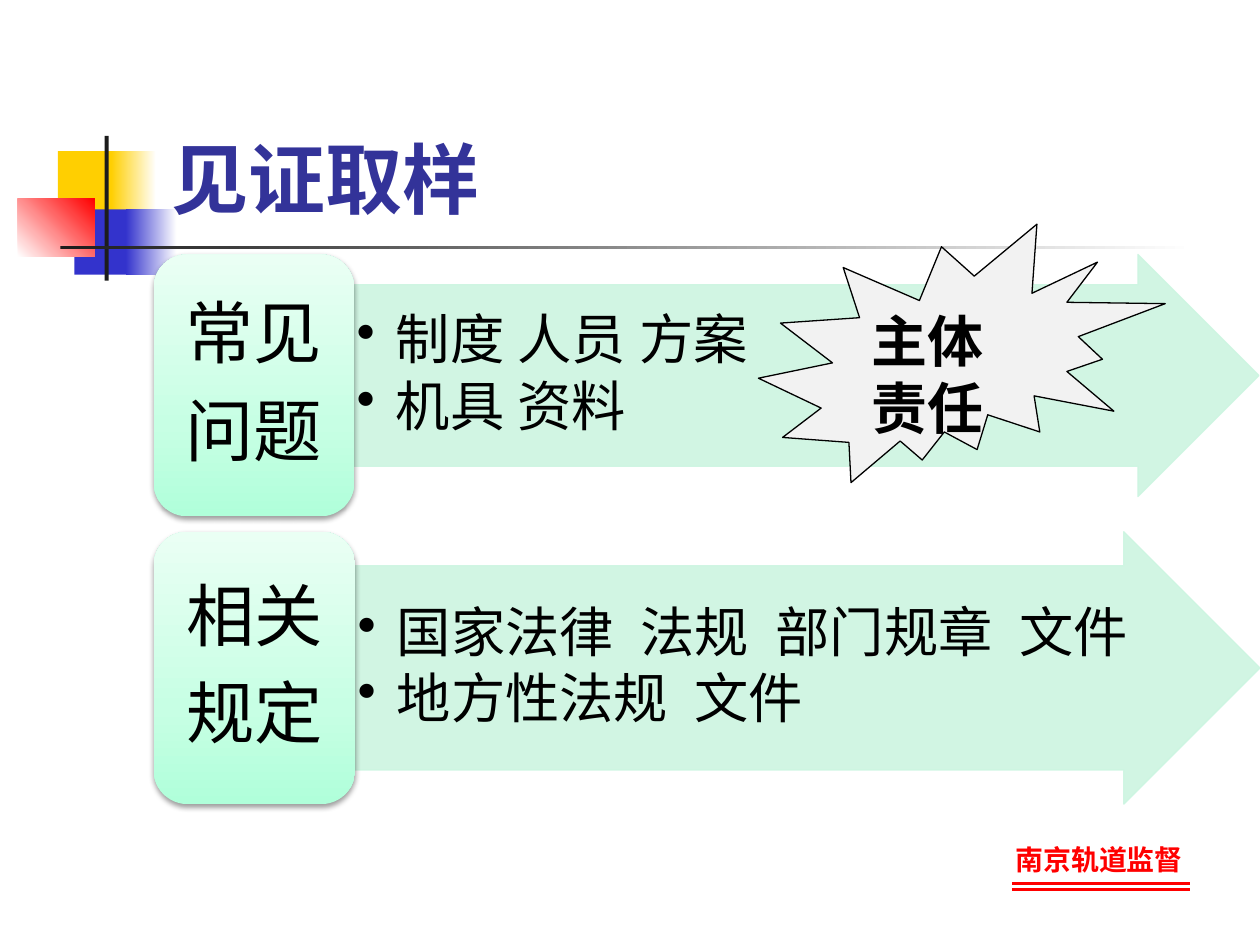
from dataclasses import dataclass

from lxml import etree
from pptx import Presentation
from pptx.dml import color as c
from pptx.enum import shapes, text
from pptx.oxml import ns
from pptx.util import Cm, Pt

FONT = "Roboto"
BLACK, RED, MINT = "000000", "FF0000", "CCF5E1"
YELLOW, BLUE, DARK, WHITE = "FFCF01", "3333CC", "1C1C1C", "FFFFFF"
BLOCK_STOPS = ((0, "B0FFDA"), (35, "C7FFE4"), (100, "EAFFF4"))
BLOCK_LEFT = 3.1
ARROW_WIDTH = 18.24
MSO = shapes.MSO_SHAPE
ALIGN, ANCHOR = text.PP_ALIGN, text.MSO_ANCHOR


@dataclass
class Bar:
    left: float
    top: float
    width: float
    height: float
    stops: tuple
    angle: int = 0


@dataclass
class Topic:
    heading: list
    items: list
    top: float
    arrow_height: float
    block_width: float
    block_height: float


BARS = [
    Bar(1.17, 3.05, 1.22, 1.32, (YELLOW,)),
    Bar(2.24, 3.05, 0.91, 1.32, (YELLOW, WHITE)),
    Bar(1.5, 4.22, 1.17, 1.32, (BLUE,)),
    Bar(2.54, 4.22, 1.02, 1.32, (BLUE, WHITE)),
    Bar(0.36, 4.01, 1.55, 1.17, (WHITE, RED), 45),
    Bar(2.11, 2.74, 0.08, 2.92, (DARK,)),
    Bar(1.22, 4.95, 22.86, 0.08, (DARK, WHITE)),
]
TOPICS = [
    Topic(["常见", "问题"], ["制度 人员 方案", "机具 资料"], 5.13, 4.88, 4.04, 5.28),
    Topic(["相关", "规定"], ["国家法律  法规  部门规章  文件", "地方性法规  文件"],
          10.72, 5.49, 4.06, 5.49),
]


def rgb(value: str) -> c.RGBColor:
    return c.RGBColor.from_string(value)


def sub(parent, tag: str, **attrs):
    return etree.SubElement(parent, ns.qn(tag), attrs)


def add_shape(slide, kind, left: float, top: float, width: float, height: float):
    """Add a shape, sized in centimetres, without shadow or outline."""
    s = slide.shapes.add_shape(kind, Cm(left), Cm(top), Cm(width), Cm(height))
    s.shadow.inherit = False
    s.line.fill.background()
    return s


def fill_solid(fill, value: str) -> None:
    fill.solid()
    fill.fore_color.rgb = rgb(value)


def fill_gradient(s, stops, angle: int) -> None:
    """Fill with (percent, colour) stops; the angle runs counter-clockwise."""
    s.fill.gradient()
    s.fill.gradient_angle = angle
    stop_list = s._element.spPr.find(".//" + ns.qn("a:gsLst"))
    stop_list.clear()
    for percent, value in stops:
        stop = sub(stop_list, "a:gs", pos=str(percent * 1000))
        sub(stop, "a:srgbClr", val=value)


def write(s, lines, size: float, color: str = BLACK, bold: bool = False,
          align=ALIGN.LEFT, anchor=ANCHOR.TOP, inset=None,
          spacing=None, after: float = 0, bullet: bool = False) -> None:
    tf = s.text_frame
    tf.word_wrap = True
    tf.vertical_anchor = anchor
    if inset is not None:
        tf.margin_left = tf.margin_right = Cm(inset)
        tf.margin_top = tf.margin_bottom = Cm(inset)
    for i, line in enumerate(lines):
        p = tf.paragraphs[0] if i == 0 else tf.add_paragraph()
        p.add_run().text = line
        p.alignment = align
        p.line_spacing = spacing
        p.space_after = Pt(after)
        p_pr = p._p.get_or_add_pPr()
        if bullet:
            p_pr.set("marL", str(Cm(0.79)))
            p_pr.set("indent", str(-Cm(0.79)))
            sub(p_pr, "a:buChar", char="•")
        p.font.size = Pt(size)
        p.font.bold = bold
        p.font.color.rgb = rgb(color)
        p.font.name = FONT
        sub(p_pr.find(ns.qn("a:defRPr")), "a:ea", typeface=FONT)


def add_text(slide, left: float, top: float, width: float, height: float, line: str, **style) -> None:
    s = slide.shapes.add_textbox(Cm(left), Cm(top), Cm(width), Cm(height))
    write(s, [line], **style)


def add_bar(slide, bar: Bar) -> None:
    s = add_shape(slide, MSO.RECTANGLE, bar.left, bar.top, bar.width, bar.height)
    if len(bar.stops) == 1:
        fill_solid(s.fill, bar.stops[0])
    else:
        fill_gradient(s, zip((0, 100), bar.stops), bar.angle)


def add_rule(slide, left: float, right: float, y: float) -> None:
    line = slide.shapes.add_connector(shapes.MSO_CONNECTOR.STRAIGHT,
                                      Cm(left), Cm(y), Cm(right), Cm(y))
    line.line.color.rgb = rgb(RED)
    line.line.width = Pt(1.5)
    sub(line._element.spPr, "a:effectLst")


def add_topic(slide, topic: Topic) -> None:
    """Draw the arrow with its items and the heading block at its tail."""
    arrow = add_shape(slide, MSO.RIGHT_ARROW, BLOCK_LEFT + topic.block_width,
                      topic.top, ARROW_WIDTH, topic.arrow_height)
    arrow.adjustments[0] = 0.75
    arrow.adjustments[1] = 0.5
    fill_solid(arrow.fill, MINT)
    fill_solid(arrow.line.fill, MINT)
    arrow.line.width = Pt(0.75)
    for clr in arrow._element.spPr.iter(ns.qn("a:srgbClr")):
        sub(clr, "a:alpha", val="90000")
    write(arrow, topic.items, 31, anchor=ANCHOR.MIDDLE, inset=0.05,
          spacing=0.9, after=4.65, bullet=True)

    block = add_shape(slide, MSO.ROUNDED_RECTANGLE, BLOCK_LEFT, topic.top,
                      topic.block_width, topic.block_height)
    fill_gradient(block, BLOCK_STOPS, 90)
    effects = block._element.spPr.find(ns.qn("a:effectLst"))
    shadow = sub(effects, "a:outerShdw", blurRad=str(Pt(3.1)), dist=str(Pt(1.6)),
                 dir="5400000", rotWithShape="0")
    sub(sub(shadow, "a:srgbClr", val=BLACK), "a:alpha", val="38000")
    write(block, topic.heading, 39, align=ALIGN.CENTER, anchor=ANCHOR.MIDDLE,
          inset=0, spacing=0.9, after=13.65)


def add_burst(slide) -> None:
    s = add_shape(slide, MSO.EXPLOSION2, 15.29, 4.52, 8.2, 5.21)
    fill_solid(s.fill, "F2F2F2")
    fill_solid(s.line.fill, BLACK)
    s.line.width = Pt(0.75)
    write(s, ["主体责任"], 32, bold=True)


def main() -> None:
    prs = Presentation()
    prs.slide_width, prs.slide_height = Cm(25.4), Cm(19.05)
    slide = prs.slides.add_slide(prs.slide_layouts[6])
    for bar in BARS:
        add_bar(slide, bar)
    add_text(slide, 20.22, 16.87, 4.45, 0.94, "南京轨道监督", size=16, color=RED, bold=True)
    for y in (17.81, 17.93):
        add_rule(slide, 20.4, 23.98, y)
    add_text(slide, 3.2, 0.58, 21.64, 4.06, "见证取样", size=44, color="333399",
             bold=True, anchor=ANCHOR.BOTTOM)
    for topic in TOPICS:
        add_topic(slide, topic)
    add_burst(slide)
    prs.save("out.pptx")


if __name__ == "__main__":
    main()
